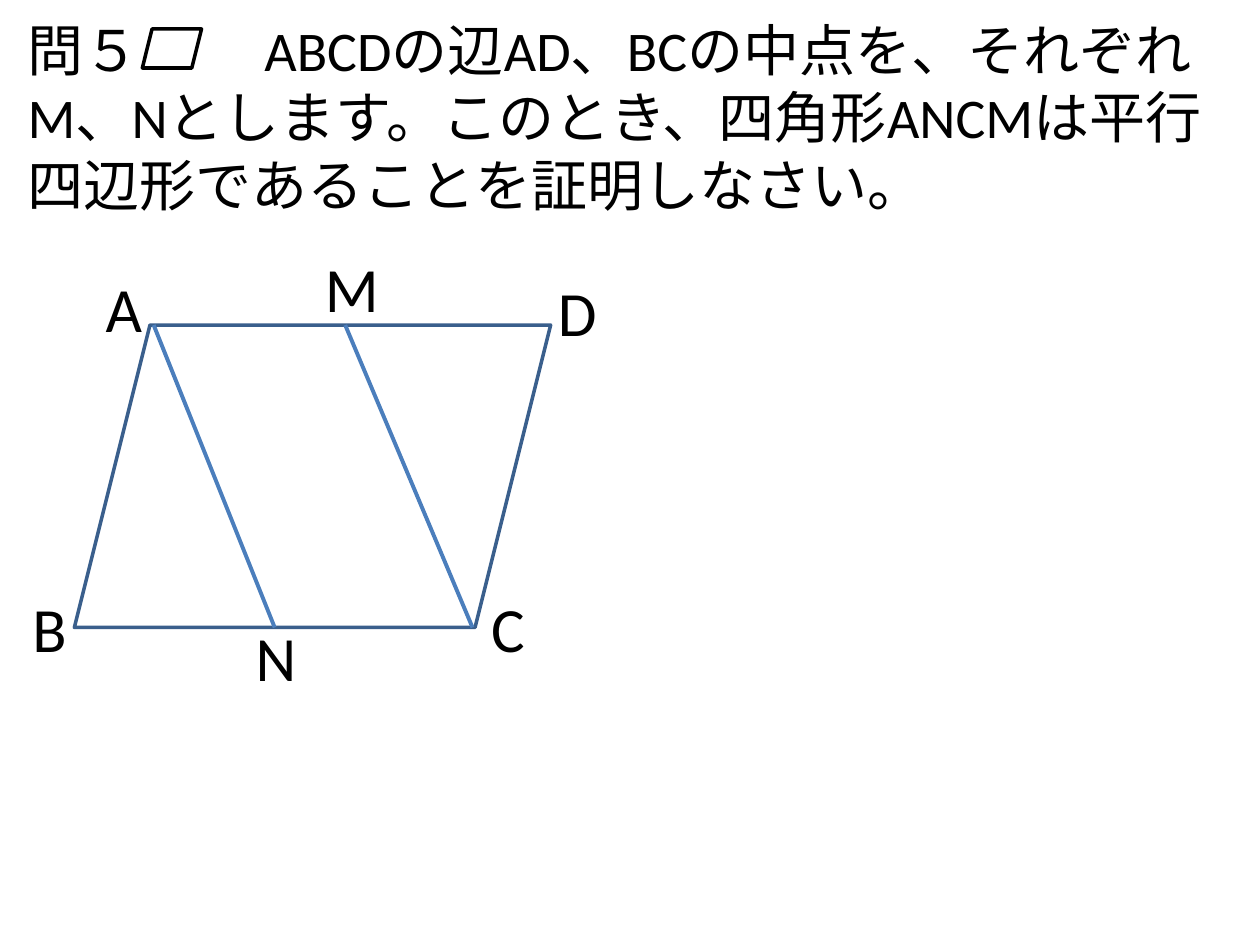
from dataclasses import dataclass

from lxml.etree import SubElement
from pptx import Presentation
from pptx.dml.color import RGBColor
from pptx.enum.lang import MSO_LANGUAGE_ID as Language
from pptx.enum.shapes import MSO_CONNECTOR as Connector, MSO_SHAPE as Shape
from pptx.enum.text import MSO_ANCHOR as Anchor, PP_ALIGN as Align
from pptx.oxml.ns import qn
from pptx.util import Inches, Pt


@dataclass(frozen=True)
class Theme:
    font: str = "Calibri"
    ink: RGBColor = RGBColor(0x00, 0x00, 0x00)
    outline: RGBColor = RGBColor(0x3A, 0x5F, 0x8C)
    segment: RGBColor = RGBColor(0x4B, 0x7E, 0xBC)
    question_size: Pt = Pt(32)
    label_size: Pt = Pt(36)
    outline_width: Pt = Pt(2)
    segment_width: Pt = Pt(2.25)


THEME = Theme()
QUESTION = (
    "問５\tABCDの辺AD、BCの中点を、それぞれM、Nとします。"
    "このとき、四角形ANCMは平行四辺形であることを証明しなさい。"
)


def set_format(target, values):
    for name, value in values.items():
        setattr(target, name, value)


def add_text(slide, box, text, size, wrap=True, anchor=Anchor.TOP):
    frame = slide.shapes.add_textbox(*map(Inches, box)).text_frame
    set_format(frame, {"word_wrap": wrap, "vertical_anchor": anchor})
    paragraph = frame.paragraphs[0]
    paragraph.alignment = Align.LEFT
    run = paragraph.add_run()
    run.text = text
    set_format(run.font, {"name": THEME.font, "size": size,
                          "language_id": Language.JAPANESE})
    run.font.color.rgb = THEME.ink
    return paragraph


def add_parallelogram(slide, box, color):
    shape = slide.shapes.add_shape(Shape.PARALLELOGRAM, *map(Inches, box))
    shape.shadow.inherit = False
    shape.fill.background()
    shape.line.color.rgb = color
    shape.line.width = THEME.outline_width


def add_segment(slide, start, end):
    line = slide.shapes.add_connector(
        Connector.STRAIGHT, *map(Inches, (*start, *end)))
    line.line.color.rgb = THEME.segment
    line.line.width = THEME.segment_width
    SubElement(line._element.spPr, qn("a:effectLst"))


def add_question(slide, box):
    """Place the wording, with a tab leaving room for the parallelogram sign."""
    left, top, _, _ = box
    paragraph = add_text(slide, box, QUESTION, THEME.question_size,
                         anchor=Anchor.MIDDLE)
    tabs = SubElement(paragraph._p.get_or_add_pPr(), qn("a:tabLst"))
    SubElement(tabs, qn("a:tab"), pos=str(Inches(1.88)), algn="l")
    add_parallelogram(slide, (left + 1.01, top - 0.07, 0.47, 0.31), THEME.ink)


def add_figure(slide, box):
    """Draw ABCD with AN and MC, and name its points."""
    left, top, _, height = box
    bottom = top + height
    add_parallelogram(slide, box, THEME.outline)

    point_a, point_m = (left + 0.63, top), (left + 2.15, top)
    point_n, point_c = (left + 1.59, bottom), (left + 3.16, bottom)
    add_segment(slide, point_a, point_n)
    add_segment(slide, point_m, point_c)

    labels = {  # offset from the figure's top left corner, and width
        "A": (0.15, -0.49, 0.49),
        "M": (1.89, -0.65, 0.63),
        "D": (3.74, -0.46, 0.51),
        "B": (-0.43, 2.05, 0.43),
        "N": (1.34, 2.28, 0.51),
        "C": (3.21, 2.05, 0.51),
    }
    for name, (across, down, width) in labels.items():
        add_text(slide, (left + across, top + down, width, 0.71), name,
                 THEME.label_size, wrap=False)


def main():
    presentation = Presentation()
    set_format(presentation, {"slide_width": Inches(10),
                              "slide_height": Inches(7.5)})
    slide = presentation.slides.add_slide(presentation.slide_layouts[6])
    add_question(slide, (0.12, 0.3, 9.69, 1.25))
    add_figure(slide, (0.59, 2.58, 3.78, 2.4))
    presentation.save("out.pptx")


if __name__ == "__main__":
    main()
